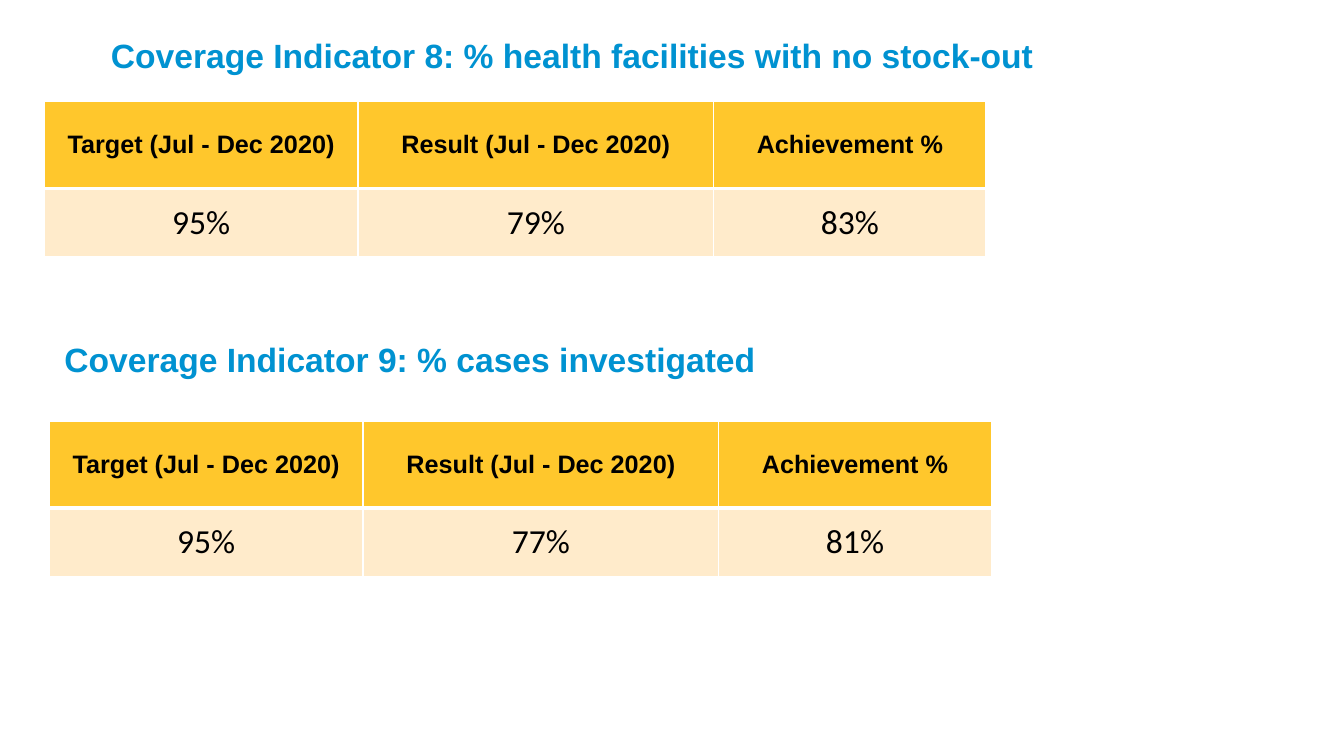
from lxml.etree import SubElement
from pptx import Presentation
from pptx.dml.color import RGBColor
from pptx.enum.text import MSO_ANCHOR, PP_ALIGN
from pptx.oxml.ns import qn
from pptx.util import Inches, Pt

HEADERS = ["Target (Jul - Dec 2020)", "Result (Jul - Dec 2020)", "Achievement %"]
INDICATORS = [
    {"heading": "Coverage Indicator 8: % health facilities with no stock-out",
     "values": ["95%", "79%", "83%"], "table_at": (0.44, 1.01)},
    {"heading": "Coverage Indicator 9: % cases investigated",
     "values": ["95%", "77%", "81%"], "table_at": (0.49, 4.18)},
]
COL_WIDTHS = [3.11, 3.53, 2.7]
ROW_HEIGHTS = [0.86, 0.68]
COLORS = {"heading": "0092D1", "header": "FFC72C", "value": "FFEBCB",
          "text": "000000", "border": "FFFFFF"}
ROW_STYLES = [  # fill, font, size, bold
    ("header", "Arial", 18, True),
    ("value", "Calibri", 24, False),
]


def style_text(tf, font, size, bold, color, align):
    p = tf.paragraphs[0]
    p.alignment = align
    f = p.runs[0].font
    f.name, f.size, f.bold = font, Pt(size), bold
    f.color.rgb = RGBColor.from_string(COLORS[color])


def set_margins(obj, x, y):
    obj.margin_left = obj.margin_right = Inches(x)
    obj.margin_top = obj.margin_bottom = Inches(y)


def add_borders(cell, top, bottom):
    """Draw the four cell borders; the sides are 1 pt wide."""
    tc_pr = cell._tc.get_or_add_tcPr()
    for side, width in (("L", 1), ("R", 1), ("T", top), ("B", bottom)):
        ln = SubElement(tc_pr, qn(f"a:ln{side}"), w=str(Pt(width)))
        fill = SubElement(ln, qn("a:solidFill"))
        SubElement(fill, qn("a:srgbClr"), val=COLORS["border"])


def add_indicator_table(slide, left, top, values):
    rows = [HEADERS, values]
    table = slide.shapes.add_table(
        len(rows), len(HEADERS), Inches(left), Inches(top),
        Inches(sum(COL_WIDTHS)), Inches(sum(ROW_HEIGHTS))).table
    for column, width in zip(table.columns, COL_WIDTHS):
        column.width = Inches(width)
    for r, (texts, height, style) in enumerate(zip(rows, ROW_HEIGHTS, ROW_STYLES)):
        table.rows[r].height = Inches(height)
        fill, font, size, bold = style
        for c, text in enumerate(texts):
            cell = table.cell(r, c)
            cell.text_frame.text = text
            cell.vertical_anchor = MSO_ANCHOR.MIDDLE
            if r == 1 and c < 2:
                set_margins(cell, 0, 0)
            else:
                set_margins(cell, 0.1, 0.05)
            style_text(cell.text_frame, font, size, bold, "text", PP_ALIGN.CENTER)
            add_borders(cell, top=3 if r == 1 else 1, bottom=3 if r == 0 else 1)
            cell.fill.solid()
            cell.fill.fore_color.rgb = RGBColor.from_string(COLORS[fill])


def add_heading(sp, text, margin, anchor):
    tf = sp.text_frame
    tf.text = text
    tf.word_wrap = True
    tf.vertical_anchor = anchor
    set_margins(tf, margin, margin)
    style_text(tf, "Arial", 24, True, "heading", PP_ALIGN.LEFT)


def main():
    prs = Presentation()
    prs.slide_width, prs.slide_height = Inches(13.33), Inches(7.5)
    slide = prs.slides.add_slide(prs.slide_layouts[5])

    title = slide.shapes.title
    title.left, title.top = Inches(1.1), Inches(0.11)
    title.width, title.height = Inches(11.23), Inches(0.87)
    add_heading(title, INDICATORS[0]["heading"], 0, MSO_ANCHOR.MIDDLE)

    for indicator in INDICATORS:
        add_indicator_table(slide, *indicator["table_at"], indicator["values"])

    box = slide.shapes.add_textbox(Inches(0.54), Inches(3.26), Inches(12.25), Inches(0.61))
    add_heading(box, INDICATORS[1]["heading"], 0.1, MSO_ANCHOR.TOP)

    prs.save("out.pptx")


if __name__ == "__main__":
    main()
